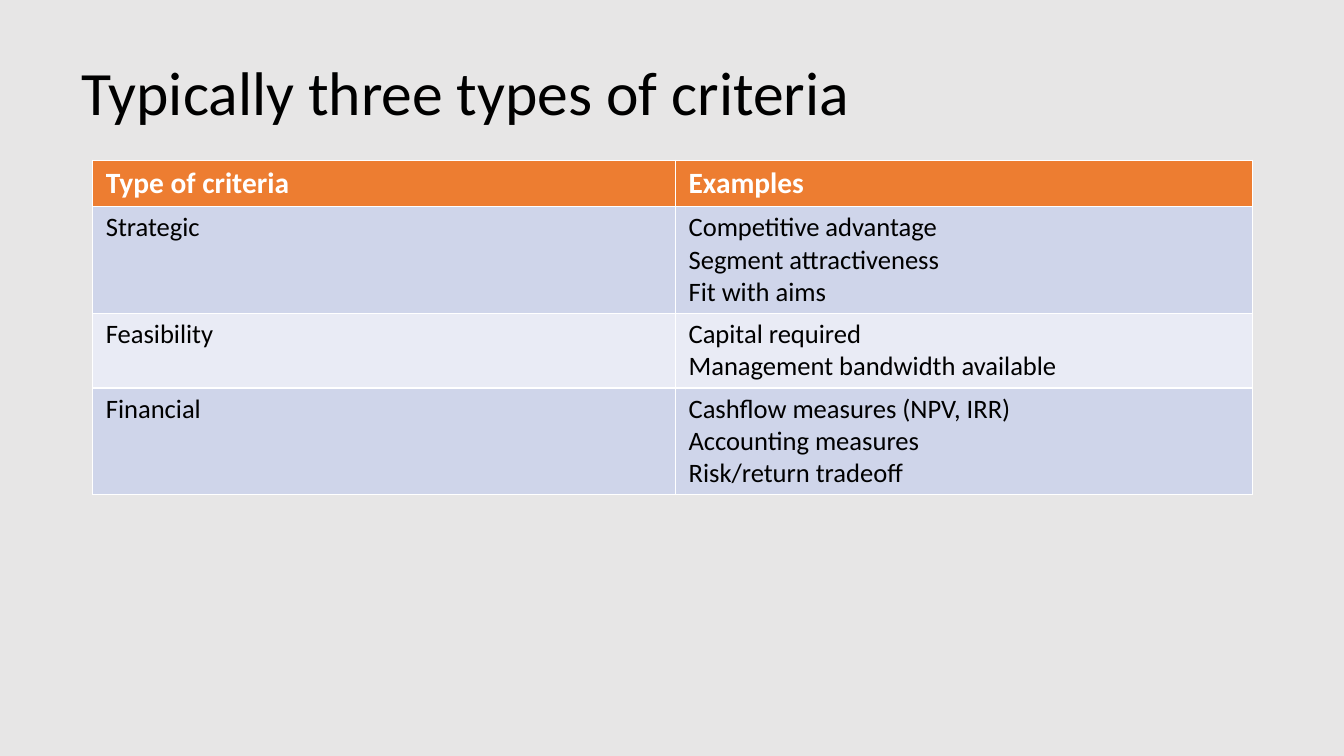
import pptx
import pptx.dml.color
import pptx.enum.text
import pptx.oxml
import pptx.oxml.ns
import pptx.util

RGBColor = pptx.dml.color.RGBColor
Inches = pptx.util.Inches
Pt = pptx.util.Pt

TITLE = "Typically three types of criteria"
HEADER = ("Type of criteria", "Examples")
CRITERIA = [
    ("Strategic", ["Competitive advantage", "Segment attractiveness", "Fit with aims"]),
    ("Feasibility", ["Capital required", "Management bandwidth available"]),
    ("Financial", ["Cashflow measures (NPV, IRR)", "Accounting measures", "Risk/return tradeoff"]),
]

FONT = "Calibri"
BACKGROUND = RGBColor(0xE7, 0xE6, 0xE6)
BLACK = RGBColor(0, 0, 0)
WHITE = RGBColor(0xFF, 0xFF, 0xFF)
ORANGE = RGBColor(0xED, 0x7D, 0x31)
BANDS = (RGBColor(0xCF, 0xD5, 0xEA), RGBColor(0xE9, 0xEB, 0xF5))

SLIDE_WIDTH, SLIDE_HEIGHT = 13.33, 7.5
TITLE_BOX = (0.71, 0.22, 10.82, 1.45)
TABLE_LEFT, TABLE_TOP = 0.92, 1.59
COLUMN_WIDTHS = (5.78, 5.72)
HEADER_HEIGHT, LINE_HEIGHT = 0.46, 0.32
PAD_X, PAD_Y = 0.13, 0.05


def style(paragraph, size, color, bold=False):
    paragraph.font.name = FONT
    paragraph.font.size = Pt(size)
    paragraph.font.bold = bold
    paragraph.font.color.rgb = color


def add_borders(cell, color, width):
    properties = cell._tc.get_or_add_tcPr()
    for side in ("lnL", "lnR", "lnT", "lnB"):
        properties.append(pptx.oxml.parse_xml(
            f'<a:{side} {pptx.oxml.ns.nsdecls("a")} w="{Pt(width)}"><a:solidFill>'
            f'<a:srgbClr val="{color}"/></a:solidFill></a:{side}>'))


def fill_cell(cell, lines, fill, size, color, bold):
    cell.margin_left = cell.margin_right = Inches(PAD_X)
    cell.margin_top = cell.margin_bottom = Inches(PAD_Y)
    add_borders(cell, WHITE, 1)
    cell.fill.solid()
    cell.fill.fore_color.rgb = fill
    cell.text_frame.text = "\n".join(lines)
    for paragraph in cell.text_frame.paragraphs:
        style(paragraph, size, color, bold)


def add_title(slide):
    frame = slide.shapes.add_textbox(*map(Inches, TITLE_BOX)).text_frame
    frame.word_wrap = True
    frame.vertical_anchor = pptx.enum.text.MSO_ANCHOR.MIDDLE
    frame.text = TITLE
    frame.paragraphs[0].line_spacing = 0.9
    style(frame.paragraphs[0], 44, BLACK)


def add_criteria_table(slide):
    heights = [HEADER_HEIGHT]
    heights += [2 * PAD_Y + LINE_HEIGHT * len(examples) for _, examples in CRITERIA]
    table = slide.shapes.add_table(
        len(heights), len(COLUMN_WIDTHS), Inches(TABLE_LEFT), Inches(TABLE_TOP),
        Inches(sum(COLUMN_WIDTHS)), Inches(sum(heights))).table
    for column, width in zip(table.columns, COLUMN_WIDTHS):
        column.width = Inches(width)
    for row, height in zip(table.rows, heights):
        row.height = Inches(height)
    for cell, label in zip(table.rows[0].cells, HEADER):
        fill_cell(cell, [label], ORANGE, 21, WHITE, True)
    for index, (criterion, examples) in enumerate(CRITERIA):
        for cell, lines in zip(table.rows[index + 1].cells, ([criterion], examples)):
            fill_cell(cell, lines, BANDS[index % 2], 19, BLACK, False)


def main():
    deck = pptx.Presentation()
    deck.slide_width = Inches(SLIDE_WIDTH)
    deck.slide_height = Inches(SLIDE_HEIGHT)
    slide = deck.slides.add_slide(deck.slide_layouts[6])
    slide.background.fill.solid()
    slide.background.fill.fore_color.rgb = BACKGROUND
    add_title(slide)
    add_criteria_table(slide)
    deck.save("out.pptx")


if __name__ == "__main__":
    main()
